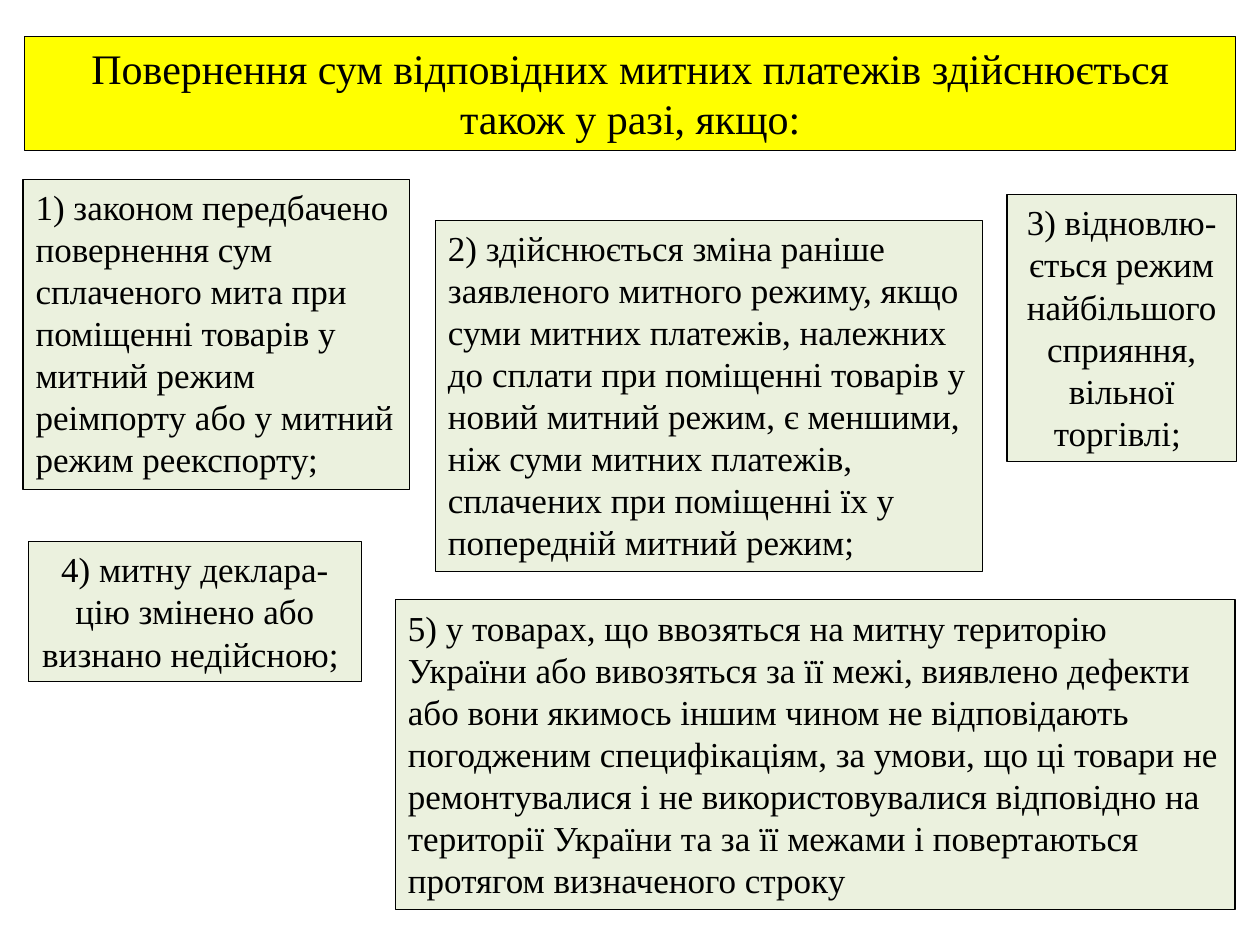
from dataclasses import dataclass

from pptx import Presentation
from pptx.dml.color import RGBColor
from pptx.enum.text import MSO_ANCHOR, MSO_AUTO_SIZE, PP_ALIGN
from pptx.util import Pt

COLORS = {"title": "FFFF00", "case": "EBF1DE", "ink": "000000"}
FONT = "Times New Roman"


@dataclass
class Panel:
    text: str
    left: float
    top: float
    width: float
    height: float
    align: PP_ALIGN = PP_ALIGN.LEFT
    fill: str = "case"
    size: float = 20


TITLE = Panel(
    "Повернення сум відповідних митних платежів здійснюється також у разі, якщо:",
    14.2, 20.7, 692, 65.5, PP_ALIGN.CENTER, "title", 24,
)

CASES = [
    Panel(
        "1) законом передбачено повернення сум сплаченого мита при поміщенні "
        "товарів у митний режим реімпорту або у митний режим реекспорту;",
        13.2, 102.7, 220.8, 177.1,
    ),
    Panel(
        "2) здійснюється зміна раніше заявленого митного режиму, якщо суми "
        "митних платежів, належних до сплати при поміщенні товарів у новий "
        "митний режим, є меншими, ніж суми митних платежів, сплачених при "
        "поміщенні їх у попередній митний режим;",
        248.9, 125.8, 312.5, 200.9,
    ),
    Panel(
        "3) відновлю-ється режим найбільшого сприяння, вільної торгівлі; ",
        575.5, 111.3, 131, 152.6, PP_ALIGN.CENTER,
    ),
    Panel(
        "4) митну деклара-цію змінено або визнано недійсною; ",
        16.3, 309.6, 190.2, 80, PP_ALIGN.CENTER,
    ),
    Panel(
        "5) у товарах, що ввозяться на митну територію України або вивозяться "
        "за її межі, виявлено дефекти або вони якимось іншим чином не "
        "відповідають погодженим специфікаціям, за умови, що ці товари не "
        "ремонтувалися і не використовувалися відповідно на території України "
        "та за її межами і повертаються протягом визначеного строку",
        226, 342.8, 479.7, 177.1,
    ),
]


def color(name: str) -> RGBColor:
    return RGBColor.from_string(COLORS[name])


def format_panel(box, panel: Panel) -> None:
    """Place, fill and outline a box, then write its text."""
    box.left, box.top = Pt(panel.left), Pt(panel.top)
    box.width, box.height = Pt(panel.width), Pt(panel.height)
    box.fill.solid()
    box.fill.fore_color.rgb = color(panel.fill)
    box.line.color.rgb = color("ink")
    box.line.width = Pt(0.75)

    frame = box.text_frame
    frame.word_wrap = True
    frame.auto_size = MSO_AUTO_SIZE.SHAPE_TO_FIT_TEXT
    frame.vertical_anchor = MSO_ANCHOR.TOP
    frame.text = panel.text
    para = frame.paragraphs[0]
    para.alignment = panel.align
    para.font.name = FONT
    para.font.size = Pt(panel.size)
    para.font.color.rgb = color("ink")


def add_case(page, panel: Panel) -> None:
    box = page.shapes.add_textbox(
        Pt(panel.left), Pt(panel.top), Pt(panel.width), Pt(panel.height)
    )
    format_panel(box, panel)


def main() -> None:
    deck = Presentation()
    deck.slide_width, deck.slide_height = Pt(720), Pt(540)
    page = deck.slides.add_slide(deck.slide_layouts.get_by_name("Title Only"))

    # Heading
    format_panel(page.shapes.title, TITLE)

    # Refund cases
    for case in CASES:
        add_case(page, case)

    deck.save("out.pptx")


if __name__ == "__main__":
    main()
